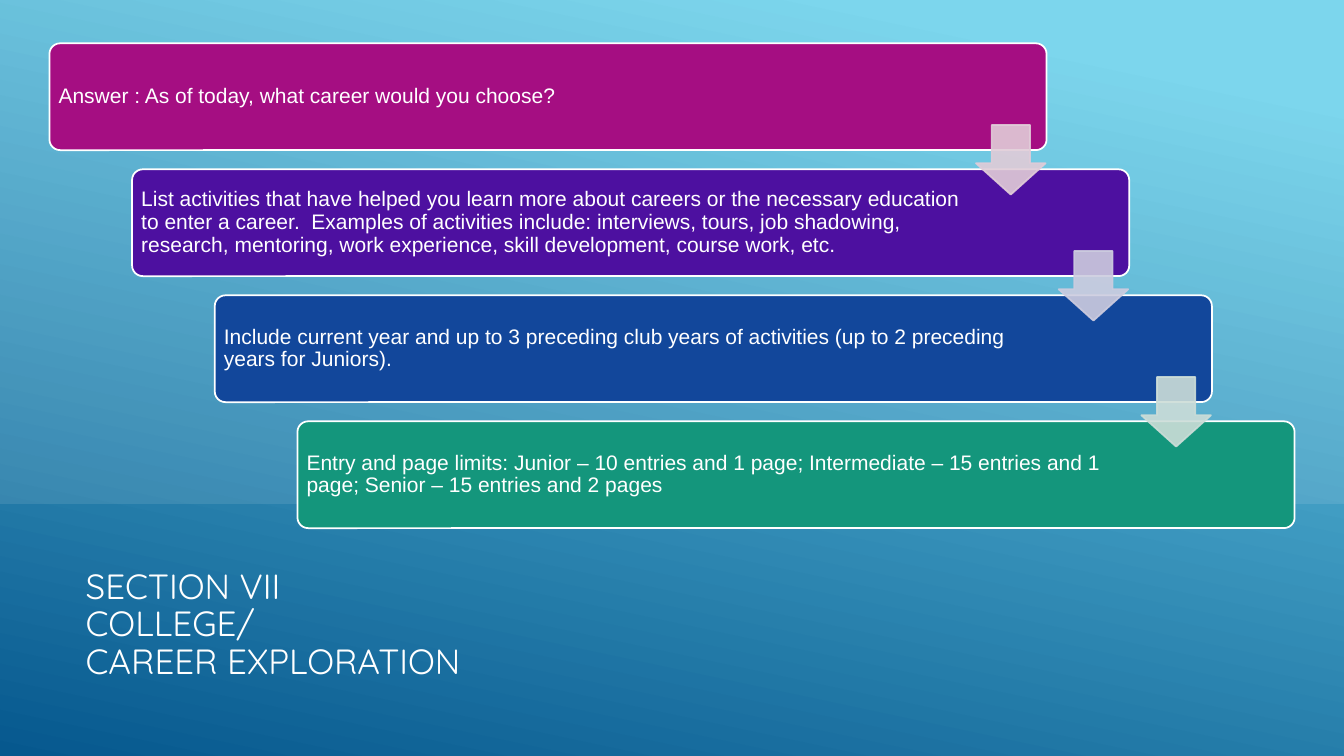
from dataclasses import dataclass

from lxml import etree
from pptx import Presentation
from pptx.dml.color import RGBColor
from pptx.enum.shapes import MSO_SHAPE
from pptx.enum.text import MSO_ANCHOR, MSO_AUTO_SIZE, PP_ALIGN
from pptx.oxml.ns import qn
from pptx.util import Inches, Pt

RECT, ROUND, DOWN = MSO_SHAPE.RECTANGLE, MSO_SHAPE.ROUNDED_RECTANGLE, MSO_SHAPE.DOWN_ARROW
MIDDLE, LEFT, NO_FIT = MSO_ANCHOR.MIDDLE, PP_ALIGN.LEFT, MSO_AUTO_SIZE.NONE


@dataclass(frozen=True)
class Theme:
    white: str = "FFFFFF"
    sky: str = "6ED2EB"
    sea: str = "06588E"
    cards: tuple = ("A50E82", "4D10A0", "12479B", "14967C")
    arrows: tuple = ("E1CCD8", "CDCCDF", "CCDDD8")
    head: str = "Quicksand"
    body: str = "Arial"
    big: float = 25
    small: float = 15
    edge: float = 1.25


T = Theme()
STEPS = (
    "Answer : As of today, what career would you choose?",
    "List activities that have helped you learn more about careers or the necessary "
    "education to enter a career.  Examples of activities include: interviews, tours, "
    "job shadowing, research, mentoring, work experience, skill development, "
    "course work, etc.",
    "Include current year and up to 3 preceding club years of activities "
    "(up to 2 preceding years for Juniors).",
    "Entry and page limits: Junior – 10 entries and 1 page; Intermediate – 15 entries "
    "and 1 page; Senior – 15 entries and 2 pages",
)
TITLE = ("SECTION VII ", "COLLEGE/", "CAREER EXPLORATION")


def add_box(kind, left, top, width, height, color, line=None, alpha=100):
    """Add a flat shape; alpha is the opacity of fill and line in percent."""
    box = slide.shapes.add_shape(kind, Inches(left), Inches(top), Inches(width), Inches(height))
    box.shadow.inherit = False
    box.fill.solid()
    box.fill.fore_color.rgb = RGBColor.from_string(color)
    if line:
        box.line.color.rgb = RGBColor.from_string(line)
        box.line.width = Pt(T.edge)
    else:
        box.line.fill.background()
    if alpha < 100:
        for tone in box._element.spPr.iter(qn("a:srgbClr")):
            etree.SubElement(tone, qn("a:alpha")).set("val", str(alpha * 1000))
    return box


def style(para, font, size):
    para.alignment = LEFT
    para.line_spacing = 0.9
    para.font.name = font
    para.font.size = Pt(size)
    para.font.color.rgb = RGBColor.from_string(T.white)


prs = Presentation()
prs.slide_width, prs.slide_height = Inches(13.33), Inches(7.5)
slide = prs.slides.add_slide(prs.slide_layouts[5])

# Backdrop, behind the title
back = add_box(RECT, 0, 0, 13.33, 7.5, T.sky)
back.fill.gradient()
back.fill.gradient_angle = 258
for stop, color, place in zip(back.fill.gradient_stops, (T.sky, T.sea), (0.1, 1)):
    stop.color.rgb = RGBColor.from_string(color)
    stop.position = place
title = slide.shapes.title
title._element.addprevious(back._element)

# Title
title.left, title.top = Inches(0.75), Inches(5.25)
title.width, title.height = Inches(11.03), Inches(1.91)
frame = title.text_frame
frame.auto_size = NO_FIT
frame.vertical_anchor = MIDDLE
para = frame.paragraphs[0]
for i, text in enumerate(TITLE):
    if i:
        para.add_line_break()
    para.add_run().text = text
style(para, T.head, T.big)

# Light panel behind the steps
add_box(RECT, 0, 0, 13.33, 5, T.white, alpha=10)

# Staircase of steps
LEFT_0, TOP_0, STEP_X, STEP_Y = 0.49, 0.43, 0.82, 1.25
for i, (text, color) in enumerate(zip(STEPS, T.cards)):
    card = add_box(ROUND, LEFT_0 + i * STEP_X, TOP_0 + i * STEP_Y, 9.89, 1.06, color, T.white)
    card.adjustments[0] = 0.1
    frame = card.text_frame
    frame.word_wrap = True
    frame.vertical_anchor = MIDDLE
    frame.margin_left = frame.margin_top = frame.margin_bottom = Inches(0.06)
    frame.margin_right = Inches(1.58)
    frame.text = text
    style(frame.paragraphs[0], T.body, T.small)

# Arrows from each step to the next
for i, color in enumerate(T.arrows):
    arrow = add_box(DOWN, LEFT_0 + 9.19 + i * STEP_X, TOP_0 + 0.81 + i * STEP_Y,
                    0.69, 0.69, color, color, alpha=90)
    arrow.adjustments[0] = 0.55
    arrow.adjustments[1] = 0.45

prs.save("out.pptx")
